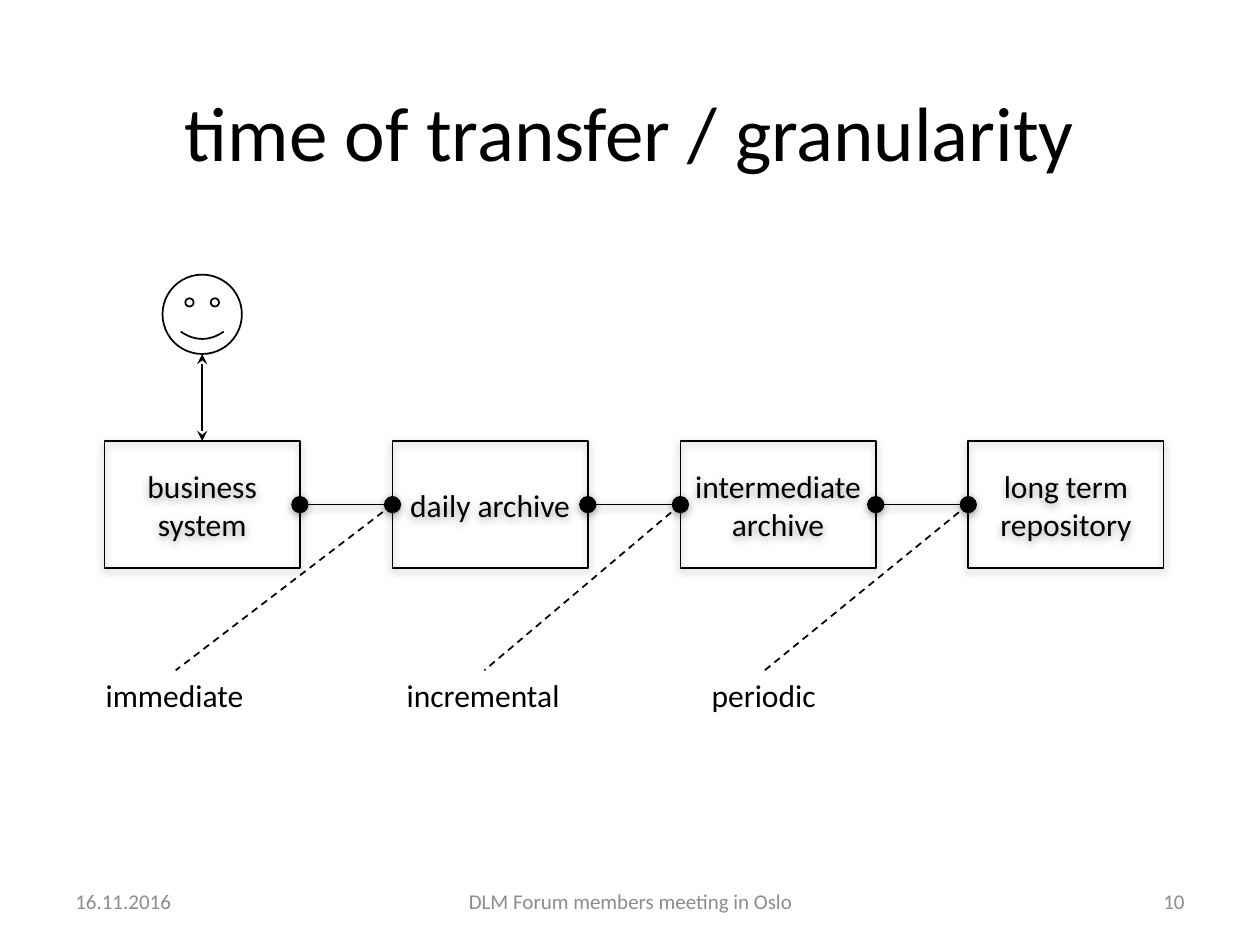
from lxml import etree
from pptx import Presentation
from pptx.dml.color import RGBColor
from pptx.enum import dml, shapes, text
from pptx.oxml.ns import qn
from pptx.util import Inches, Pt

BLACK, GREY = "000000", "8C8C8C"
ALIGN, ANCHOR = text.PP_ALIGN, text.MSO_ANCHOR


def rgb(value):
    return RGBColor.from_string(value)


def write(shape, words, size=18, color=BLACK, align=ALIGN.LEFT,
          anchor=ANCHOR.MIDDLE, wrap=True):
    tf = shape.text_frame
    tf.word_wrap = wrap
    tf.vertical_anchor = anchor
    p = tf.paragraphs[0]
    p.alignment = align
    r = p.add_run()
    r.text = words
    r.font.name = "Calibri"
    r.font.size = Pt(size)
    r.font.color.rgb = rgb(color)


def set_effects(shape, opacity=None, distance=1.8):
    """Give a soft downward shadow, or none when opacity is not set."""
    effects = etree.SubElement(shape._element.spPr, qn("a:effectLst"))
    if opacity:
        shadow = etree.SubElement(
            effects, qn("a:outerShdw"), blurRad=str(Pt(5)),
            dist=str(Pt(distance)), dir="5400000", rotWithShape="0")
        color = etree.SubElement(shadow, qn("a:srgbClr"), val=BLACK)
        etree.SubElement(color, qn("a:alpha"), val=str(opacity * 1000))


class Diagram:
    def __init__(self, prs):
        self.s = prs.slides.add_slide(prs.slide_layouts[5])

    def title(self, words, *at):
        sp = self.s.shapes.title
        sp.left, sp.top, sp.width, sp.height = map(Inches, at)
        write(sp, words, size=44, align=ALIGN.CENTER)

    def label(self, words, *at, **style):
        write(self.s.shapes.add_textbox(*map(Inches, at)), words, **style)

    def outline(self, kind, *at):
        sp = self.s.shapes.add_shape(kind, *map(Inches, at))
        sp.fill.background()
        sp.line.color.rgb = rgb(BLACK)
        sp.line.width = Pt(1)
        return sp

    def box(self, words, *at):
        sp = self.outline(shapes.MSO_SHAPE.RECTANGLE, *at)
        set_effects(sp, 35)
        write(sp, words, align=ALIGN.CENTER)

    def face(self, *at):
        set_effects(self.outline(shapes.MSO_SHAPE.SMILEY_FACE, *at))

    def line(self, *ends, tips=None, tip_size="med", dashed=False, opacity=None):
        c = self.s.shapes.add_connector(
            shapes.MSO_CONNECTOR.STRAIGHT, *map(Inches, ends))
        c.line.color.rgb = rgb(BLACK)
        c.line.width = Pt(1)
        if dashed:
            c.line.dash_style = dml.MSO_LINE.DASH
        if tips:
            for end in ("a:headEnd", "a:tailEnd"):
                etree.SubElement(c.line._get_or_add_ln(), qn(end),
                                 type=tips, w=tip_size, len=tip_size)
        set_effects(c, opacity, 1.6)


def main():
    prs = Presentation()
    prs.slide_width, prs.slide_height = Inches(10), Inches(7.5)
    d = Diagram(prs)
    d.title("time of transfer / granularity", 0.5, 0.52, 9, 1.03)

    # Chain of systems
    left, top, width, height, step = 0.83, 3.5, 1.55, 1.01, 2.285
    middle = top + height / 2
    systems = ["business system", "daily archive",
               "intermediate archive", "long term repository"]
    starts = [left + i * step for i in range(len(systems))]
    for words, x in zip(systems, starts):
        d.box(words, x, top, width, height)
    for x, following in zip(starts, starts[1:]):
        d.line(x + width, middle, following, middle,
               tips="oval", tip_size="lg", opacity=38)

    # User of the business system
    user_x, face_top, face = left + width / 2, 2.18, 0.63
    d.face(user_x - face / 2, face_top, face, face)
    d.line(user_x, face_top + face, user_x, top, tips="stealth")

    # Time of each transfer: words, left, width
    transfers = [("immediate", 0.74, 1.31), ("incremental", 3.13, 1.43),
                 ("periodic", 5.55, 1.04)]
    label_top = 5.32
    for (words, x, w), target in zip(transfers, starts[1:]):
        d.label(words, x, label_top, w, 0.4, anchor=ANCHOR.TOP, wrap=False)
        d.line(target, middle, x + w / 2, label_top, dashed=True)

    # Footer
    for words, x, w, align in [
            ("16.11.2016", 0.5, 2.33, ALIGN.LEFT),
            ("DLM Forum members meeting in Oslo", 3.19, 3.63, ALIGN.CENTER),
            ("10", 7.17, 2.33, ALIGN.RIGHT)]:
        d.label(words, x, 6.95, w, 0.4, size=12, color=GREY, align=align)

    prs.save("out.pptx")


if __name__ == "__main__":
    main()
